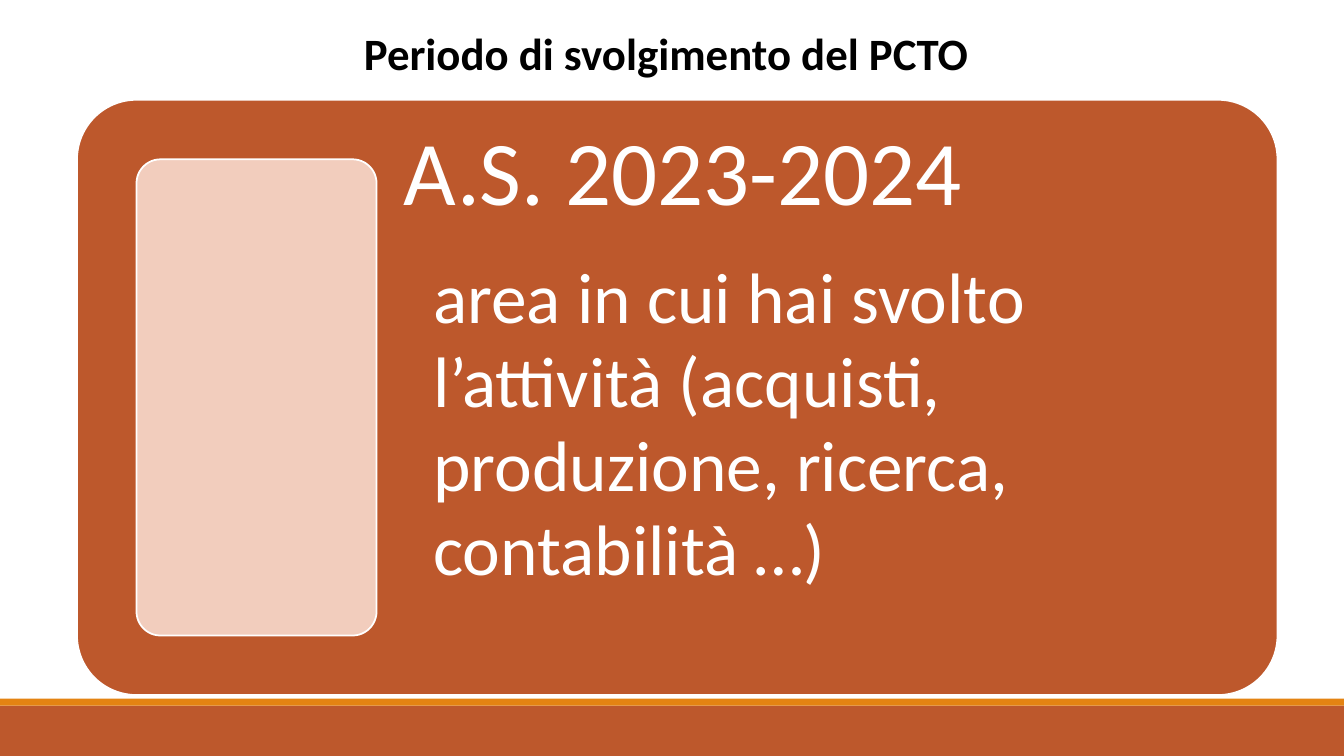
from dataclasses import dataclass

from pptx import Presentation
from pptx.dml.color import RGBColor
from pptx.enum.shapes import MSO_SHAPE
from pptx.enum.text import MSO_ANCHOR, PP_ALIGN
from pptx.util import Pt

TITLE = "Periodo di svolgimento del PCTO"
SCHOOL_YEAR = "A.S. 2023-2024"
AREA = "area in cui hai svolto l’attività (acquisti, produzione, ricerca, contabilità …)"


@dataclass(frozen=True)
class Theme:
    font: str = "Calibri"
    rust: RGBColor = RGBColor(0xBD, 0x58, 0x2C)
    orange: RGBColor = RGBColor(0xE4, 0x83, 0x12)
    peach: RGBColor = RGBColor(0xF2, 0xCD, 0xBD)
    white: RGBColor = RGBColor(0xFF, 0xFF, 0xFF)
    black: RGBColor = RGBColor(0, 0, 0)
    title_size: int = 32
    year_size: int = 65
    area_size: int = 51


THEME = Theme()
WIDTH, HEIGHT = 960, 540
FOOTER_HEIGHT, STRIPE_HEIGHT = 36, 5
CARD = (55, 71.3, 857.5, 425.2)
MARGIN = CARD[3] / 10
PANEL_WIDTH = CARD[2] / 5
TEXT_INSET = 19.5


def add_filled(slide, kind, box, color, outlined=False):
    shape = slide.shapes.add_shape(kind, *map(Pt, box))
    shape.shadow.inherit = False
    shape.fill.solid()
    shape.fill.fore_color.rgb = color
    if outlined:
        shape.adjustments[0] = 0.1
        shape.line.color.rgb = THEME.white
        shape.line.width = Pt(1.25)
    else:
        shape.line.fill.background()


def style_paragraph(paragraph, size, color, bold=False):
    paragraph.font.name = THEME.font
    paragraph.font.size = Pt(size)
    paragraph.font.color.rgb = color
    paragraph.font.bold = bold


def add_title(slide):
    title = slide.shapes.title
    title.left, title.top, title.width, title.height = map(Pt, (247.5, 15, 457, 46))
    frame = title.text_frame
    frame.text = TITLE
    frame.word_wrap = True
    frame.vertical_anchor = MSO_ANCHOR.TOP
    paragraph = frame.paragraphs[0]
    paragraph.alignment = PP_ALIGN.CENTER
    style_paragraph(paragraph, THEME.title_size, THEME.black, bold=True)


def add_card_text(slide, box):
    frame = slide.shapes.add_textbox(*map(Pt, box)).text_frame
    frame.word_wrap = True
    frame.margin_left = frame.margin_right = Pt(TEXT_INSET)
    frame.margin_top = frame.margin_bottom = Pt(TEXT_INSET)
    year = frame.paragraphs[0]
    year.text = SCHOOL_YEAR
    year.line_spacing = 0.9
    year.space_after = Pt(22)
    style_paragraph(year, THEME.year_size, THEME.white)
    area = frame.add_paragraph()
    area.text = AREA
    area.line_spacing = 0.98
    area._p.get_or_add_pPr().set("marL", str(Pt(21)))
    style_paragraph(area, THEME.area_size, THEME.white)


def main():
    presentation = Presentation()
    presentation.slide_width, presentation.slide_height = Pt(WIDTH), Pt(HEIGHT)
    slide = presentation.slides.add_slide(presentation.slide_layouts[5])

    footer_top = HEIGHT - FOOTER_HEIGHT
    add_filled(slide, MSO_SHAPE.RECTANGLE, (0, footer_top, WIDTH, FOOTER_HEIGHT), THEME.rust)
    add_filled(slide, MSO_SHAPE.RECTANGLE,
               (0, footer_top - STRIPE_HEIGHT, WIDTH, STRIPE_HEIGHT), THEME.orange)

    left, top, width, height = CARD
    panel = (left + MARGIN, top + MARGIN, PANEL_WIDTH, height - 2 * MARGIN)
    text_left = panel[0] + PANEL_WIDTH
    add_filled(slide, MSO_SHAPE.ROUNDED_RECTANGLE, CARD, THEME.rust, outlined=True)
    add_card_text(slide, (text_left, top, left + width - text_left, height))
    add_filled(slide, MSO_SHAPE.ROUNDED_RECTANGLE, panel, THEME.peach, outlined=True)
    add_title(slide)
    presentation.save("out.pptx")


if __name__ == "__main__":
    main()
